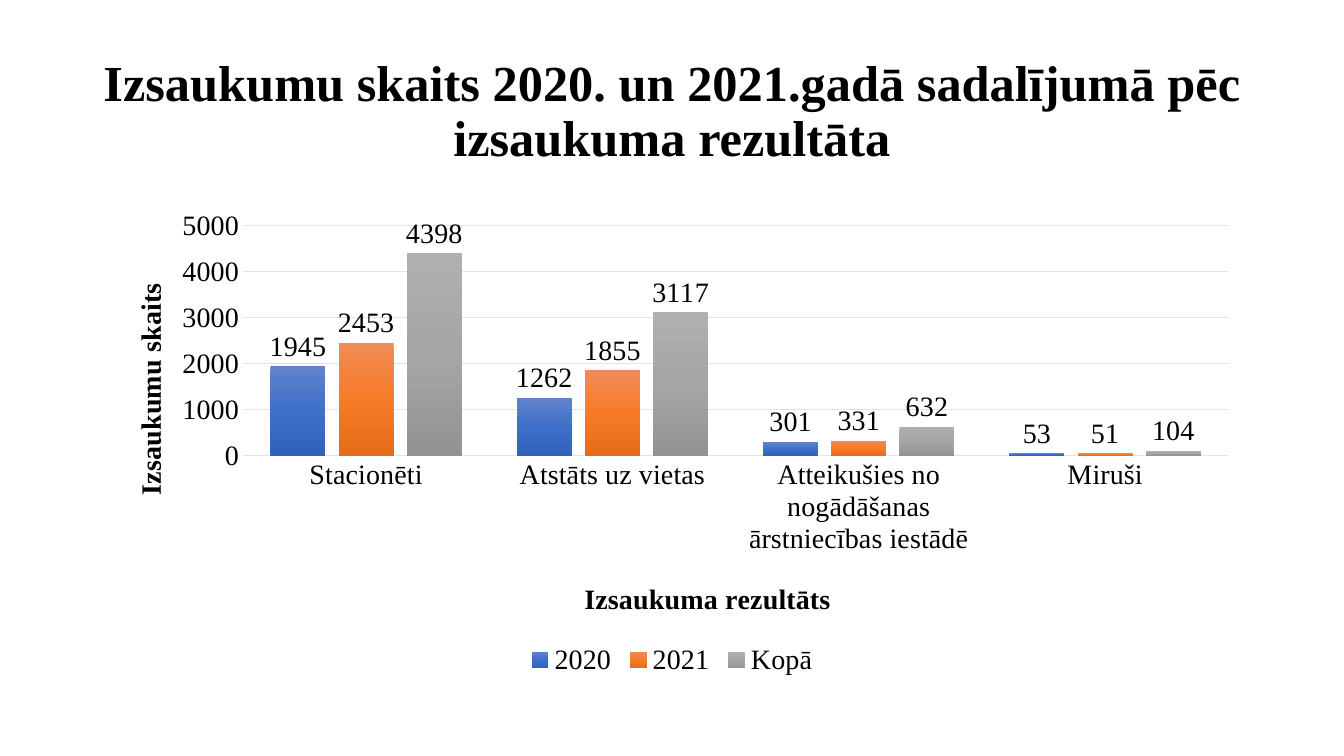
from lxml.etree import SubElement
from pptx import Presentation
from pptx.chart.data import CategoryChartData
from pptx.dml.color import RGBColor
from pptx.enum.chart import XL_CHART_TYPE as ChartType
from pptx.enum.chart import XL_LABEL_POSITION as LabelPosition
from pptx.enum.chart import XL_LEGEND_POSITION as LegendPosition
from pptx.enum.chart import XL_TICK_MARK as TickMark
from pptx.enum.text import MSO_ANCHOR as Anchor
from pptx.enum.text import PP_ALIGN as Align
from pptx.oxml.ns import qn
from pptx.util import Pt

PX = 9525
FONT = "Times New Roman"
BLACK = "000000"
GRID = "E0E5EB"
CATEGORIES = [
    "Stacionēti",
    "Atstāts uz vietas",
    "Atteikušies no nogādāšanas ārstniecības iestādē",
    "Miruši",
]
SERIES = [
    ("2020", [1945, 1262, 301, 53], ["6183CB", "3E70CA", "3062BB"]),
    ("2021", [2453, 1855, 331, 51], ["F18C57", "F67B28", "E56C19"]),
    ("Kopā", [4398, 3117, 632, 104], ["AFAFAF", "A5A5A5", "939393"]),
]


def px(*lengths):
    return [length * PX for length in lengths]


def color(value):
    return RGBColor.from_string(value)


def style_font(font, size, bold=False):
    font.name = FONT
    font.size = Pt(size)
    font.bold = bold
    font.color.rgb = color(BLACK)


def style_line(line):
    line.color.rgb = color(GRID)
    line.width = Pt(0.75)


def add_title(page, text, bounds):
    box = page.shapes.add_textbox(*px(*bounds))
    frame = box.text_frame
    frame.word_wrap = True
    frame.vertical_anchor = Anchor.MIDDLE
    frame.text = text
    para = frame.paragraphs[0]
    para.alignment = Align.CENTER
    para.line_spacing = 0.9
    style_font(para.runs[0].font, 36, bold=True)


def place(element, index, **fractions):
    for old in element.findall(qn("c:layout")):
        element.remove(old)
    layout = SubElement(element, qn("c:layout"))
    element.insert(index, layout)
    manual = SubElement(layout, qn("c:manualLayout"))
    if "w" in fractions:
        SubElement(manual, qn("c:layoutTarget")).set("val", "inner")
    for side in ("x", "y"):
        SubElement(manual, qn(f"c:{side}Mode")).set("val", "edge")
    for side, fraction in fractions.items():
        SubElement(manual, qn(f"c:{side}")).set("val", str(fraction))


def name_axis(axis, text, rotation, x, y):
    title = axis.axis_title
    title.text_frame.text = text
    style_font(title.text_frame.paragraphs[0].runs[0].font, 20, bold=True)
    body = title._element.find(".//" + qn("a:bodyPr"))
    body.set("rot", str(rotation * 60000))
    body.set("vert", "horz")
    place(title._element, 1, x=x, y=y)


def fill_gradient(series, stops):
    properties = series._element.get_or_add_spPr()
    gradient = SubElement(properties, qn("a:gradFill"))
    stop_list = SubElement(gradient, qn("a:gsLst"))
    for index, value in enumerate(stops):
        stop = SubElement(stop_list, qn("a:gs"))
        stop.set("pos", str(index * 50000))
        SubElement(stop, qn("a:srgbClr")).set("val", value)
    SubElement(gradient, qn("a:lin")).set("ang", "5400000")


def style_axes(chart):
    for axis in (chart.category_axis, chart.value_axis):
        axis.major_tick_mark = TickMark.NONE
        axis.minor_tick_mark = TickMark.NONE
        style_font(axis.tick_labels.font, 20)
    style_line(chart.category_axis.format.line)
    values = chart.value_axis
    values.minimum_scale, values.maximum_scale = 0, 5000
    values.major_unit = 1000
    values.format.line.fill.background()
    style_line(values.major_gridlines.format.line)
    name_axis(chart.category_axis, "Izsaukuma rezultāts", 0, 0.42, 0.78)
    name_axis(values, "Izsaukumu skaits", -90, 0.03, 0.16)


def add_call_chart(page, bounds):
    data = CategoryChartData()
    data.categories = CATEGORIES
    for name, values, stops in SERIES:
        data.add_series(name, values)
    chart = page.shapes.add_chart(
        ChartType.COLUMN_CLUSTERED, *px(*bounds), data
    ).chart
    style_font(chart.font, 20)
    chart.has_title = False
    chart.has_legend = True
    chart.legend.position = LegendPosition.BOTTOM
    chart.legend.include_in_layout = False
    style_font(chart.legend.font, 20)
    plot = chart.plots[0]
    plot.vary_by_categories = False
    plot.gap_width = 100
    plot.overlap = -24
    for series, (name, values, stops) in zip(plot.series, SERIES):
        fill_gradient(series, stops)
        labels = series.data_labels
        labels.show_value = True
        labels.position = LabelPosition.OUTSIDE_END
        style_font(labels.font, 20)
    style_axes(chart)
    area = chart._chartSpace.find(".//" + qn("c:plotArea"))
    place(area, 0, x=0.13, y=0.05, w=0.85, h=0.48)


def main():
    deck = Presentation()
    deck.slide_width, deck.slide_height = px(1280, 720)
    page = deck.slides.add_slide(deck.slide_layouts[6])
    add_title(
        page,
        "Izsaukumu skaits 2020. un 2021.gadā sadalījumā pēc izsaukuma rezultāta",
        (88, 38, 1104, 139),
    )
    add_call_chart(page, (88, 192, 1104, 457))
    deck.save("out.pptx")


if __name__ == "__main__":
    main()
